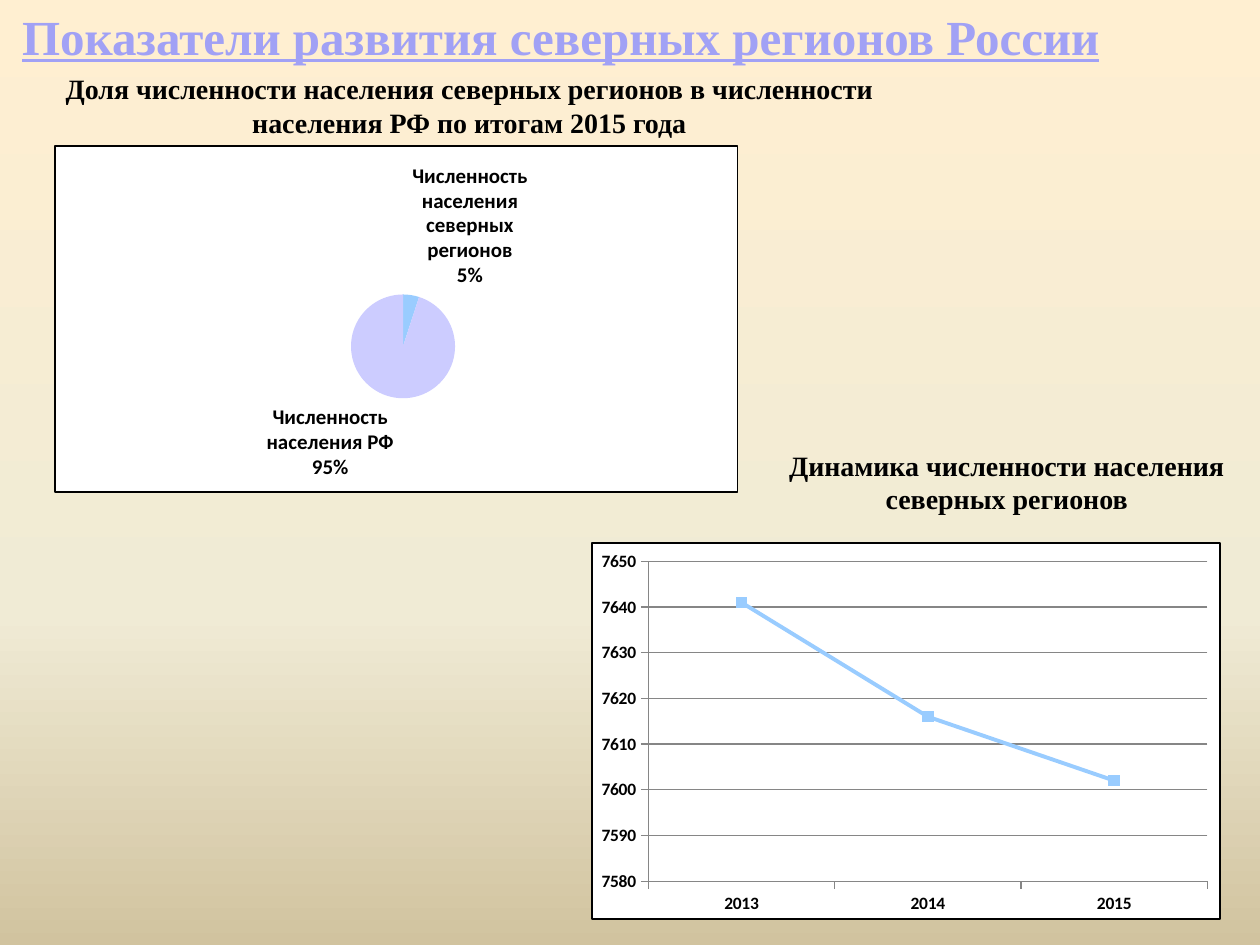
from dataclasses import dataclass

import lxml.etree
import pptx
import pptx.chart.chart
import pptx.chart.data
import pptx.dml.color
import pptx.enum.chart
import pptx.enum.text
import pptx.oxml
import pptx.oxml.ns
import pptx.slide
import pptx.util
from pptx.util import Inches

COLORS = {
    "text": "000000",
    "panel": "FFFFFF",
    "grid": "868686",
    "north": "99CCFF",
    "country": "CCCCFF",
    "title": "A1A1F5",
    "background": "F0EBD5",
}
BACKGROUND_STOPS = [(0, "FFEFD1"), (65, COLORS["background"]), (100, "D1C39F")]
TITLE_STOPS = [(0, "50507E"), (78, COLORS["title"]), (100, "F5F5FF")]


@dataclass
class Box:
    left: float
    top: float
    width: float
    height: float

    def lengths(self) -> list:
        return [Inches(v) for v in (self.left, self.top, self.width, self.height)]


@dataclass
class Heading:
    text: str
    box: Box
    size: int
    color: str = "text"
    underline: bool = False
    wrap: bool = True


@dataclass
class Panel:
    kind: pptx.enum.chart.XL_CHART_TYPE
    box: Box
    plot: Box
    size: int
    values: dict


TITLE = Heading("Показатели развития северных регионов России",
                Box(0.03, 0, 8.84, 0.57), 28, "title", True, False)
SUBHEADINGS = [
    Heading("Доля численности населения северных регионов в численности "
            "населения РФ по итогам 2015 года", Box(0.35, 0.52, 6.75, 0.64), 16),
    Heading("Динамика численности населения северных регионов",
            Box(5.98, 3.51, 4.02, 0.64), 16),
]
SHARE = Panel(pptx.enum.chart.XL_CHART_TYPE.PIE, Box(0.43, 1.15, 5.43, 2.76),
              Box(0.43, 0.43, 0.16, 0.3), 12,
              {"Численность населения северных регионов": 5,
               "Численность населения РФ": 95})
DYNAMICS = Panel(pptx.enum.chart.XL_CHART_TYPE.LINE_MARKERS, Box(4.69, 4.3, 5, 3),
                 Box(0.09, 0.05, 0.89, 0.85), 10,
                 {"2013": 7641, "2014": 7616, "2015": 7602})


def rgb(name: str) -> pptx.dml.color.RGBColor:
    return pptx.dml.color.RGBColor.from_string(COLORS[name])


def xml(tag: str, body: str) -> lxml.etree._Element:
    return pptx.oxml.parse_xml(
        f"<{tag} {pptx.oxml.ns.nsdecls('a', 'c')}>{body}</{tag.split()[0]}>")


def use_gradient(parent: lxml.etree._Element, stops: list) -> None:
    marks = "".join(f'<a:gs pos="{pos * 1000}"><a:srgbClr val="{color}"/></a:gs>'
                    for pos, color in stops)
    gradient = xml("a:gradFill",
                   f'<a:gsLst>{marks}</a:gsLst><a:lin ang="5400000" scaled="0"/>')
    solid = parent.find(".//" + pptx.oxml.ns.qn("a:solidFill"))
    solid.getparent().replace(solid, gradient)


def add_heading(slide: pptx.slide.Slide, heading: Heading):
    frame = slide.shapes.add_textbox(*heading.box.lengths()).text_frame
    frame.word_wrap = heading.wrap
    frame.auto_size = pptx.enum.text.MSO_AUTO_SIZE.SHAPE_TO_FIT_TEXT
    paragraph = frame.paragraphs[0]
    paragraph.alignment = pptx.enum.text.PP_ALIGN.CENTER
    run = paragraph.add_run()
    run.text = heading.text
    run.font.name = "Times New Roman"
    run.font.size = pptx.util.Pt(heading.size)
    run.font.bold = True
    run.font.underline = heading.underline
    run.font.color.rgb = rgb(heading.color)
    return run


def add_panel(slide: pptx.slide.Slide, panel: Panel) -> pptx.chart.chart.Chart:
    data = pptx.chart.data.CategoryChartData()
    data.categories = list(panel.values)
    data.add_series("Series 1", list(panel.values.values()))
    chart = slide.shapes.add_chart(panel.kind, *panel.box.lengths(), data).chart
    chart.has_title = False
    chart.has_legend = False
    chart.font.name = "Calibri"
    chart.font.size = pptx.util.Pt(panel.size)
    chart.font.bold = True
    chart.font.color.rgb = rgb("text")
    chart_space = chart._chartSpace
    chart_space.find(pptx.oxml.ns.qn("c:txPr")).addprevious(xml(
        "c:spPr",
        f'<a:solidFill><a:srgbClr val="{COLORS["panel"]}"/></a:solidFill>'
        f'<a:ln w="12700"><a:solidFill><a:srgbClr val="{COLORS["text"]}"/>'
        "</a:solidFill></a:ln>"))
    plot_area = chart_space.chart.plotArea
    for layout in plot_area.findall(pptx.oxml.ns.qn("c:layout")):
        plot_area.remove(layout)
    plot_area.insert(0, xml(
        "c:layout",
        '<c:manualLayout><c:layoutTarget val="inner"/>'
        '<c:xMode val="edge"/><c:yMode val="edge"/>'
        f'<c:x val="{panel.plot.left}"/><c:y val="{panel.plot.top}"/>'
        f'<c:w val="{panel.plot.width}"/><c:h val="{panel.plot.height}"/>'
        "</c:manualLayout>"))
    return chart


def style_share(chart: pptx.chart.chart.Chart) -> None:
    plot = chart.plots[0]
    plot.vary_by_categories = True
    for index, color in enumerate(("north", "country")):
        fill = plot.series[0].points[index].format.fill
        fill.solid()
        fill.fore_color.rgb = rgb(color)
    labels = plot.series[0].data_labels
    labels.show_category_name = True
    labels.show_percentage = True
    labels.show_value = False
    labels.number_format = "0%"
    labels.number_format_is_linked = False
    labels.position = pptx.enum.chart.XL_LABEL_POSITION.OUTSIDE_END
    labels._element.find(pptx.oxml.ns.qn("c:showBubbleSize")).addnext(
        xml("c:separator", "\n"))


def style_dynamics(chart: pptx.chart.chart.Chart) -> None:
    chart.plots[0].vary_by_categories = False
    line = chart.plots[0].series[0]
    line.smooth = False
    line.format.line.color.rgb = rgb("north")
    line.format.line.width = pptx.util.Pt(2.25)
    line.marker.style = pptx.enum.chart.XL_MARKER_STYLE.SQUARE
    line.marker.size = 6
    line.marker.format.fill.solid()
    line.marker.format.fill.fore_color.rgb = rgb("north")
    line.marker.format.line.color.rgb = rgb("north")
    scale = chart.value_axis
    scale.minimum_scale, scale.maximum_scale, scale.major_unit = 7580, 7650, 10
    scale.has_major_gridlines = True
    for part in (scale, chart.category_axis, scale.major_gridlines):
        part.format.line.color.rgb = rgb("grid")
        part.format.line.width = pptx.util.Pt(0.75)
    for axis in (scale, chart.category_axis):
        axis.major_tick_mark = pptx.enum.chart.XL_TICK_MARK.OUTSIDE


def main() -> None:
    deck = pptx.Presentation()
    deck.slide_width, deck.slide_height = Inches(10), Inches(7.5)
    slide = deck.slides.add_slide(deck.slide_layouts[6])
    slide.background.fill.solid()
    slide.background.fill.fore_color.rgb = rgb("background")
    use_gradient(slide._element, BACKGROUND_STOPS)
    title = add_heading(slide, TITLE)
    use_gradient(title._r, TITLE_STOPS)
    style_share(add_panel(slide, SHARE))
    style_dynamics(add_panel(slide, DYNAMICS))
    for heading in SUBHEADINGS:
        add_heading(slide, heading)
    deck.save("out.pptx")


if __name__ == "__main__":
    main()
